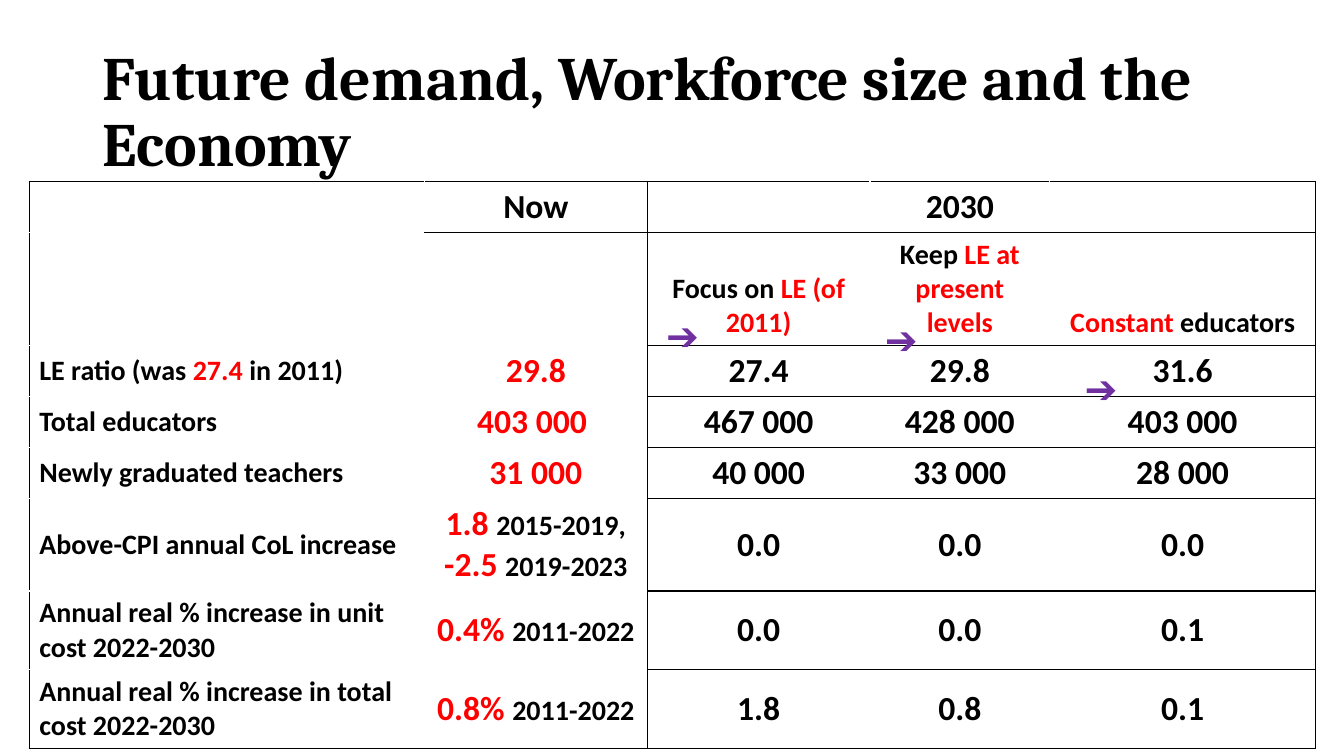
import pptx
import pptx.dml.color
import pptx.enum.text
import pptx.oxml
import pptx.oxml.ns
import pptx.util

PX = 9144
BLACK, RED, WHITE, PURPLE = "000000", "FF0000", "FFFFFF", "7030A0"
ALIGN = pptx.enum.text.PP_ALIGN
ANCHOR = pptx.enum.text.MSO_ANCHOR

TITLE = "Future demand, Workforce size and the Economy"
COLUMN_WIDTHS = [392, 221, 221, 178, 264]
ROW_HEIGHTS = [47, 102, 47, 47, 47, 84, 71, 71]
# Text between asterisks is red.
SCENARIOS = [
    ["", "Now", "", "2030", ""],
    ["", "", "Focus on *LE (of 2011)*", "Keep *LE at present levels*", "*Constant* educators"],
    ["LE ratio (was *27.4* in 2011)", "*29.8*", "27.4", "29.8", "31.6"],
    ["Total educators", "*403 000 *", "467 000", "428 000", "403 000"],
    ["Newly graduated teachers", "*31 000*", "40 000", "33 000", "28 000"],
    ["Above-CPI annual CoL increase", "*1.8 *2015-2019,\n*-2.5 *2019-2023", "0.0", "0.0", "0.0"],
    ["Annual real % increase in unit cost 2022-2030", "*0.4% *2011-2022", "0.0", "0.0", "0.1"],
    ["Annual real % increase in total cost 2022-2030", "*0.8% *2011-2022", "1.8", "0.8", "0.1"],
]
ARROW_CORNERS = [(635, 305), (1050, 357), (852, 309)]


def px(length):
    """Turn px into EMU."""
    return pptx.util.Emu(length * PX)


def rgb(value):
    """Turn a hex string into a colour."""
    return pptx.dml.color.RGBColor.from_string(value)


def style_font(font, name, size, color):
    """Set a bold font with the given face, size and colour."""
    font.name, font.size, font.bold = name, pptx.util.Pt(size), True
    font.color.rgb = rgb(color)


def add_title(slide, left, top, width, height):
    """Place and format the slide title."""
    title = slide.shapes.title
    title.left, title.top, title.width, title.height = map(px, (left, top, width, height))
    frame = title.text_frame
    frame.text = TITLE
    frame.word_wrap = True
    frame.auto_size = pptx.enum.text.MSO_AUTO_SIZE.NONE
    frame.vertical_anchor = ANCHOR.MIDDLE
    heading = frame.paragraphs[0]
    heading.alignment, heading.line_spacing = ALIGN.LEFT, 0.9
    style_font(heading.font, "Cambria", 44, BLACK)
    slide.shapes._spTree.append(title._element)


def set_borders(cell, row, column):
    """Rule the scenario block fully and only the outline of the rest."""
    def across(edge):
        return edge in (0, len(ROW_HEIGHTS)) or column >= 2 or (column, edge) == (1, 1)

    def down(edge):
        return edge in (0, 2, len(COLUMN_WIDTHS))

    sides = {"lnL": down(column), "lnR": down(column + 1),
             "lnT": across(row), "lnB": across(row + 1)}
    properties = cell._tc.get_or_add_tcPr()
    for position, (side, dark) in enumerate(sides.items()):
        properties.insert(position, pptx.oxml.parse_xml(
            f'<a:{side} {pptx.oxml.ns.nsdecls("a")} w="12700"><a:solidFill>'
            f'<a:srgbClr val="{BLACK if dark else WHITE}"/></a:solidFill></a:{side}>'))


def fill_cell(cell, text, row, column):
    """Write one cell with its red parts, fill and borders."""
    small = column == 0 or row == 1 or (column == 1 and row > 1)
    red_size = 24 if column == 1 else 20
    cell.fill.solid()
    cell.fill.fore_color.rgb = rgb(WHITE)
    cell.vertical_anchor = ANCHOR.BOTTOM if row < 2 else ANCHOR.MIDDLE
    set_borders(cell, row, column)
    for number, line in enumerate(text.split("\n")):
        frame = cell.text_frame
        paragraph = frame.add_paragraph() if number else frame.paragraphs[0]
        paragraph.alignment = ALIGN.CENTER if column else ALIGN.LEFT
        style_font(paragraph.font, "Calibri", 20 if small else 24, BLACK)
        for index, part in enumerate(line.split("*")):
            if part:
                run = paragraph.add_run()
                run.text = part
                if index % 2:
                    style_font(run.font, "Calibri", red_size, RED)


def add_scenario_table(slide, left, top):
    """Build the table of present and 2030 figures."""
    table = slide.shapes.add_table(
        len(ROW_HEIGHTS), len(COLUMN_WIDTHS), px(left), px(top),
        px(sum(COLUMN_WIDTHS)), px(sum(ROW_HEIGHTS))).table
    table.first_row = table.horz_banding = False
    for column, width in zip(table.columns, COLUMN_WIDTHS):
        column.width = px(width)
    for row, height in zip(table.rows, ROW_HEIGHTS):
        row.height = px(height)
    for row, texts in enumerate(SCENARIOS):
        for column, text in enumerate(texts):
            fill_cell(table.cell(row, column), text, row, column)


def add_arrow(slide, left, top, width=84, height=55):
    """Place one purple arrow sign."""
    frame = slide.shapes.add_textbox(*map(px, (left, top, width, height))).text_frame
    frame.word_wrap = True
    frame.vertical_anchor = ANCHOR.MIDDLE
    frame.text = "➔"
    sign = frame.paragraphs[0]
    sign.alignment = ALIGN.CENTER
    style_font(sign.font, "Calibri", 28, PURPLE)


def main():
    """Build and save the slide."""
    deck = pptx.Presentation()
    deck.slide_width, deck.slide_height = px(1333), px(750)
    slide = deck.slides.add_slide(deck.slide_layouts[5])
    add_scenario_table(slide, 29, 180)
    for left, top in ARROW_CORNERS:
        add_arrow(slide, left, top)
    add_title(slide, 92, 40, 1150, 145)
    deck.save("out.pptx")


if __name__ == "__main__":
    main()
